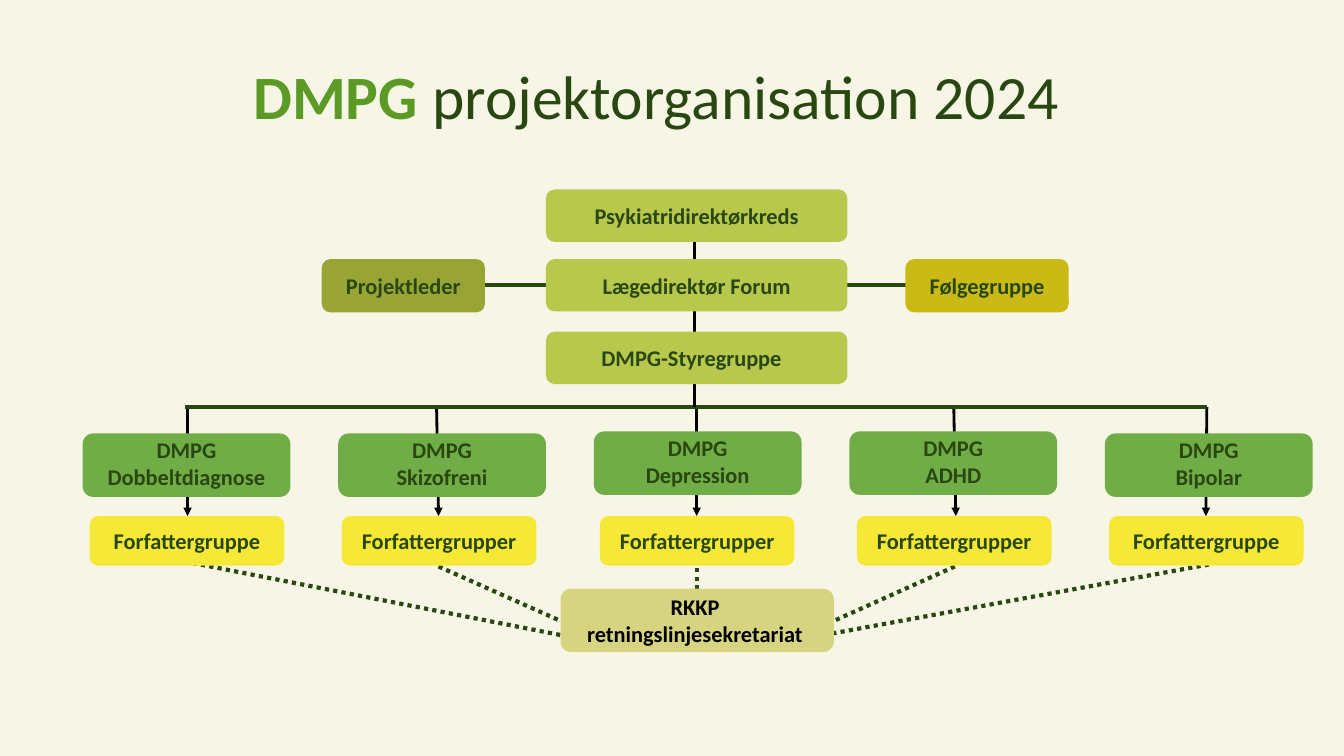
from collections import namedtuple
from dataclasses import dataclass

from lxml.etree import SubElement
from pptx import Presentation
from pptx.dml.color import RGBColor
from pptx.enum.dml import MSO_LINE
from pptx.enum.shapes import MSO_CONNECTOR, MSO_SHAPE
from pptx.enum.text import MSO_ANCHOR, PP_ALIGN
from pptx.oxml.ns import qn
from pptx.util import Inches, Pt


@dataclass(frozen=True)
class Theme:
    font: str = "Calibri"
    title_size: int = 44
    label_size: int = 16
    background: str = "F7F6E6"
    dark_green: str = "294711"
    title_green: str = "5A9A25"
    black: str = "000000"
    management: str = "B8C84D"
    project_lead: str = "98A535"
    advisory: str = "CBB916"
    disease_group: str = "70AD47"
    authors: str = "F6E836"
    secretariat: str = "D7D481"


THEME = Theme()
Box = namedtuple("Box", "left top width height")
Group = namedtuple("Group", "name authors author_left drop tail_x top")

# Offsets of author boxes and connector ends are measured from the row's left edge
GROUPS = [
    Group("Dobbeltdiagnose", "Forfattergruppe", 0.07, 1.04, 1.04, 0.02),
    Group("Skizofreni", "Forfattergrupper", 2.57, 3.51, 3.53, 0.02),
    Group("Depression", "Forfattergrupper", 5.13, 6.09, 6.09, 0),
    Group("ADHD", "Forfattergrupper", 7.68, 8.64, 8.66, 0),
    Group("Bipolar", "Forfattergruppe", 10.18, 11.15, 11.14, 0.02),
]


def color(value):
    return RGBColor.from_string(value)


def add_run(paragraph, text, *, size=THEME.label_size, fill=THEME.dark_green, bold=True):
    run = paragraph.add_run()
    run.text = text
    run.font.name = THEME.font
    run.font.size = Pt(size)
    run.font.bold = bold
    run.font.color.rgb = color(fill)


def write(shape, paragraphs, *, insets=(0.1, 0.05, 0.1, 0.05), line_spacing=1.0):
    """Each paragraph is a list of (text, format) pairs."""
    frame = shape.text_frame
    frame.word_wrap = True
    frame.vertical_anchor = MSO_ANCHOR.MIDDLE
    (frame.margin_left, frame.margin_top,
     frame.margin_right, frame.margin_bottom) = map(Inches, insets)
    for index, runs in enumerate(paragraphs):
        paragraph = frame.add_paragraph() if index else frame.paragraphs[0]
        paragraph.alignment = PP_ALIGN.CENTER
        paragraph.line_spacing = line_spacing
        for text, style in runs:
            add_run(paragraph, text, **style)


def add_unit(slide, box, fill, *lines, text_color=THEME.dark_green, **layout):
    unit = slide.shapes.add_shape(MSO_SHAPE.ROUNDED_RECTANGLE, *map(Inches, box))
    unit.shadow.inherit = False
    unit.fill.solid()
    unit.fill.fore_color.rgb = color(fill)
    unit.line.fill.background()
    write(unit, [[(line, {"fill": text_color})] for line in lines], **layout)


def add_link(slide, start, end, stroke=THEME.black, width=2, *, arrow=False, dotted=False):
    link = slide.shapes.add_connector(MSO_CONNECTOR.STRAIGHT, *map(Inches, start + end))
    link.line.color.rgb = color(stroke)
    link.line.width = Pt(width)
    if dotted:
        link.line.dash_style = MSO_LINE.ROUND_DOT
    if arrow:
        SubElement(link.line._get_or_add_ln(), qn("a:tailEnd"), type="triangle")
    SubElement(link._element.spPr, qn("a:effectLst"))


def add_title(slide, box):
    title = slide.shapes.add_textbox(*map(Inches, box))
    size = THEME.title_size
    write(title, [[("DMPG", {"size": size, "fill": THEME.title_green}),
                   (" projektorganisation 2024", {"size": size, "bold": False})]],
          line_spacing=0.9)


def add_management(slide, box):
    """Stack of three steering bodies with a unit on either side."""
    center = box.left + box.width / 2
    spine_x = center - 0.01
    forum_top = box.top + 0.69
    side_width = 1.62
    lead_left, advisory_left = box.left, box.left + box.width - side_width
    add_link(slide, (spine_x, box.top + 0.3), (spine_x, box.top + 2.16))
    add_link(slide, (lead_left + 1.2, forum_top + 0.26),
             (advisory_left + 0.33, forum_top + 0.26), THEME.dark_green, 3)

    bodies = [("Psykiatridirektørkreds", 0, 0.1), ("Lægedirektør Forum", 0.69, 0.1),
              ("DMPG-Styregruppe", 1.41, 0.2)]
    for name, offset, right_inset in bodies:
        add_unit(slide, Box(center - 1.48, box.top + offset, 2.99, 0.52),
                 THEME.management, name, insets=(0.1, 0.05, right_inset, 0.05))
    for name, left, fill in (("Projektleder", lead_left, THEME.project_lead),
                             ("Følgegruppe", advisory_left, THEME.advisory)):
        add_unit(slide, Box(left, forum_top, side_width, 0.53), fill, name)


def add_groups(slide, box):
    """Row of disease groups, each with its authors, under one bus line."""
    bus_y = box.top
    group_width = 2.06
    step = (box.width - group_width) / (len(GROUPS) - 1)
    for group in GROUPS:
        add_link(slide, (box.left + group.drop, bus_y),
                 (box.left + group.tail_x, bus_y + 1.08), arrow=True)
    add_link(slide, (box.left + 1.02, bus_y), (box.left + 11.15, bus_y),
             THEME.dark_green, 3)

    for index, group in enumerate(GROUPS):
        add_unit(slide, Box(box.left + index * step, bus_y + 0.24 + group.top,
                            group_width, 0.63),
                 THEME.disease_group, "DMPG", group.name, insets=(0.1, 0, 0.1, 0.05))
        add_unit(slide, Box(box.left + group.author_left, bus_y + 1.08, 1.93, 0.49),
                 THEME.authors, group.authors)


def add_secretariat(slide, box):
    """Shared secretariat with dotted links up to all author groups."""
    right = box.left + box.width
    links = [((1.83, 5.57), (box.left, box.top + 0.46)),
             ((4.35, 5.62), (box.left, box.top + 0.32)),
             ((6.91, 5.47), (6.91, box.top + 0.15)),
             ((9.47, 5.62), (right, box.top + 0.32)),
             ((11.99, 5.6), (right - 0.1, box.top + 0.46))]
    for start, end in links:
        add_link(slide, start, end, THEME.dark_green, 3, dotted=True)
    add_unit(slide, box, THEME.secretariat, "RKKP retningslinjesekretariat",
             text_color=THEME.black, insets=(0.1, 0.05, 0.14, 0.05))


def main():
    presentation = Presentation()
    presentation.slide_width = Inches(13.33)
    presentation.slide_height = Inches(7.5)
    slide = presentation.slides.add_slide(presentation.slide_layouts[6])
    slide.background.fill.solid()
    slide.background.fill.fore_color.rgb = color(THEME.background)

    add_title(slide, Box(0.76, 0.57, 11.5, 0.84))
    # Dotted links go first so that the author boxes cover their ends
    add_secretariat(slide, Box(5.56, 5.84, 2.71, 0.63))
    add_groups(slide, Box(0.82, 4.04, 12.2, 1.57))
    add_management(slide, Box(3.19, 1.88, 7.41, 1.93))
    presentation.save("out.pptx")


if __name__ == "__main__":
    main()
